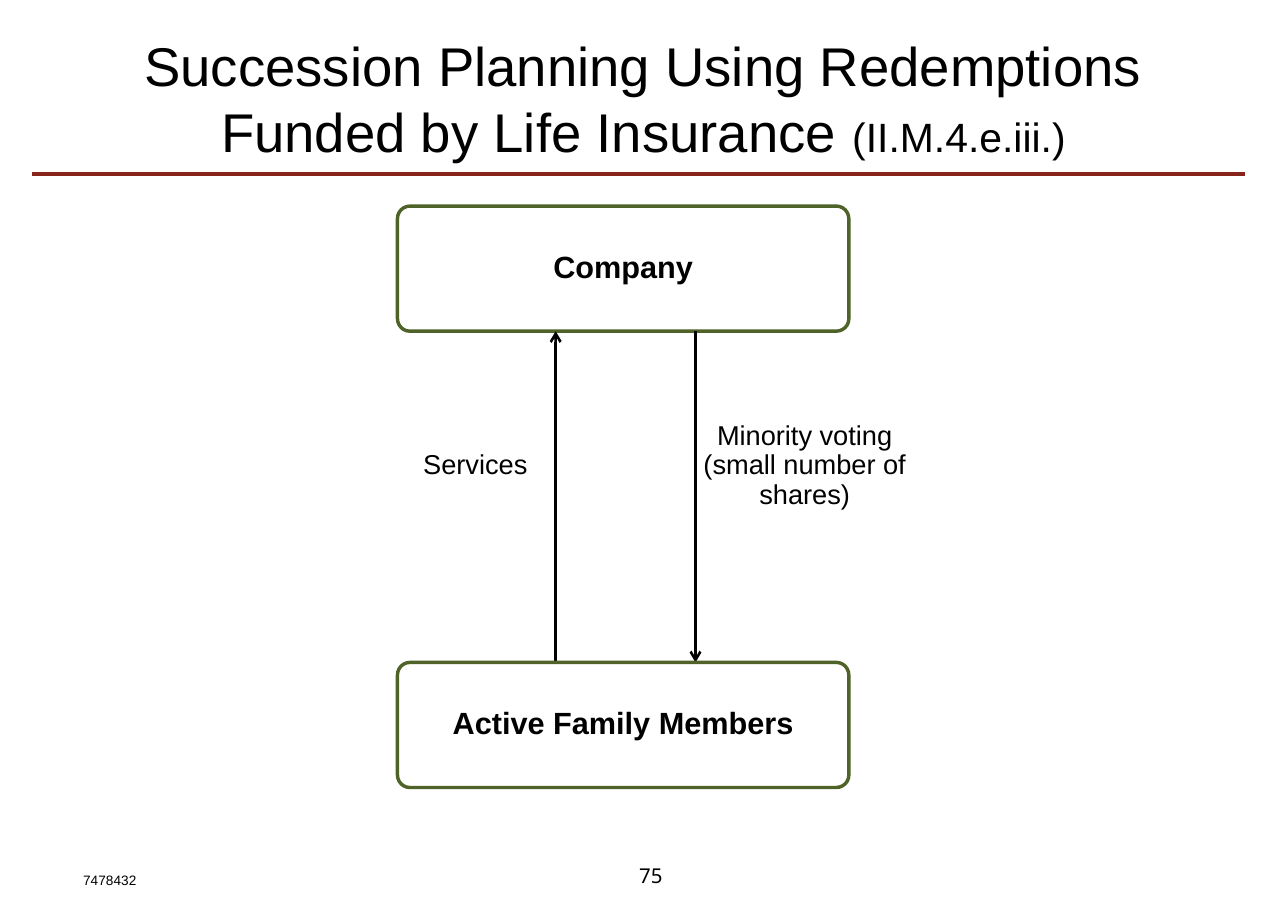
from lxml import etree
from pptx import Presentation, util as u
from pptx.dml.color import RGBColor
from pptx.enum import shapes, text
from pptx.oxml import ns

COLORS = {"ink": "000000", "rule": "87251B", "border": "4F6228", "paper": "FFFFFF"}
ALIGN = text.PP_ALIGN
MIDDLE = text.MSO_ANCHOR.MIDDLE


def color(name):
    return RGBColor.from_string(COLORS[name])


def write(frame, paragraphs, size=16, font="Arial", bold=False,
          align=ALIGN.CENTER, anchor=MIDDLE, spacing=1.0):
    frame.word_wrap = True
    frame.vertical_anchor = anchor
    for index, spans in enumerate(paragraphs):
        para = frame.add_paragraph() if index else frame.paragraphs[0]
        para.alignment = align
        para.line_spacing = spacing
        for words, span_size in spans:
            span = para.add_run()
            span.text = words
            span.font.name = font
            span.font.size = u.Pt(span_size or size)
            span.font.bold = bold
            span.font.color.rgb = color("ink")


class Diagram:
    def __init__(self, slide):
        self.slide = slide

    def label(self, place, *paragraphs, **style):
        box = self.slide.shapes.add_textbox(*map(u.Inches, place))
        write(box.text_frame, paragraphs, **style)

    def party(self, place, name):
        box = self.slide.shapes.add_shape(
            shapes.MSO_SHAPE.ROUNDED_RECTANGLE, *map(u.Inches, place))
        box.adjustments[0] = 0.1
        box.shadow.inherit = False
        box.fill.solid()
        box.fill.fore_color.rgb = color("paper")
        box.line.color.rgb = color("border")
        box.line.width = u.Pt(2)
        write(box.text_frame, [[(name, None)]], size=18, bold=True, spacing=0.9)

    def line(self, start, end, ink="ink", width=1.5, arrow=False):
        connector = self.slide.shapes.add_connector(
            shapes.MSO_CONNECTOR.STRAIGHT, *map(u.Inches, start + end))
        connector.line.color.rgb = color(ink)
        connector.line.width = u.Pt(width)
        properties = connector.element.spPr
        if arrow:
            outline = properties.find(ns.qn("a:ln"))
            etree.SubElement(outline, ns.qn("a:tailEnd"), type="arrow")
        etree.SubElement(properties, ns.qn("a:effectLst"))


def main():
    deck = Presentation()
    deck.slide_width, deck.slide_height = u.Inches(10.5), u.Inches(7.5)
    page = Diagram(deck.slides.add_slide(deck.slide_layouts[6]))

    page.line((0.26, 1.42), (10.15, 1.42), ink="rule", width=2.75)
    page.label((4.97, 6.94, 0.53, 0.4), [("75", None)],
               size=12, font="Noto Sans", align=ALIGN.RIGHT)
    page.label((0.58, 7.06, 1.93, 0.24), [("7478432", None)],
               size=8, align=ALIGN.LEFT, anchor=text.MSO_ANCHOR.TOP)
    page.label((0.52, 0.17, 9.45, 1.25),
               [("Succession Planning Using Redemptions Funded by Life Insurance ", None),
                ("(II.M.4.e.iii.)", 24)], size=32)

    left, width, height = 3.24, 3.68, 1.02
    company_top, family_top = 1.68, 5.4
    company_bottom = company_top + height
    page.party((left, company_top, width, height), "Company")
    page.label((5.6, 3.35, 1.92, 0.9), [("Minority voting", None)],
               [("(small number of shares)", None)], spacing=0.9)
    page.label((3.13, 3.59, 1.49, 0.42), [("Services", None)], spacing=0.9)
    page.line((5.67, company_bottom), (5.67, family_top), arrow=True)
    page.line((4.53, family_top), (4.53, company_bottom), arrow=True)
    page.party((left, family_top, width, height), "Active Family Members")

    deck.save("out.pptx")


if __name__ == "__main__":
    main()
